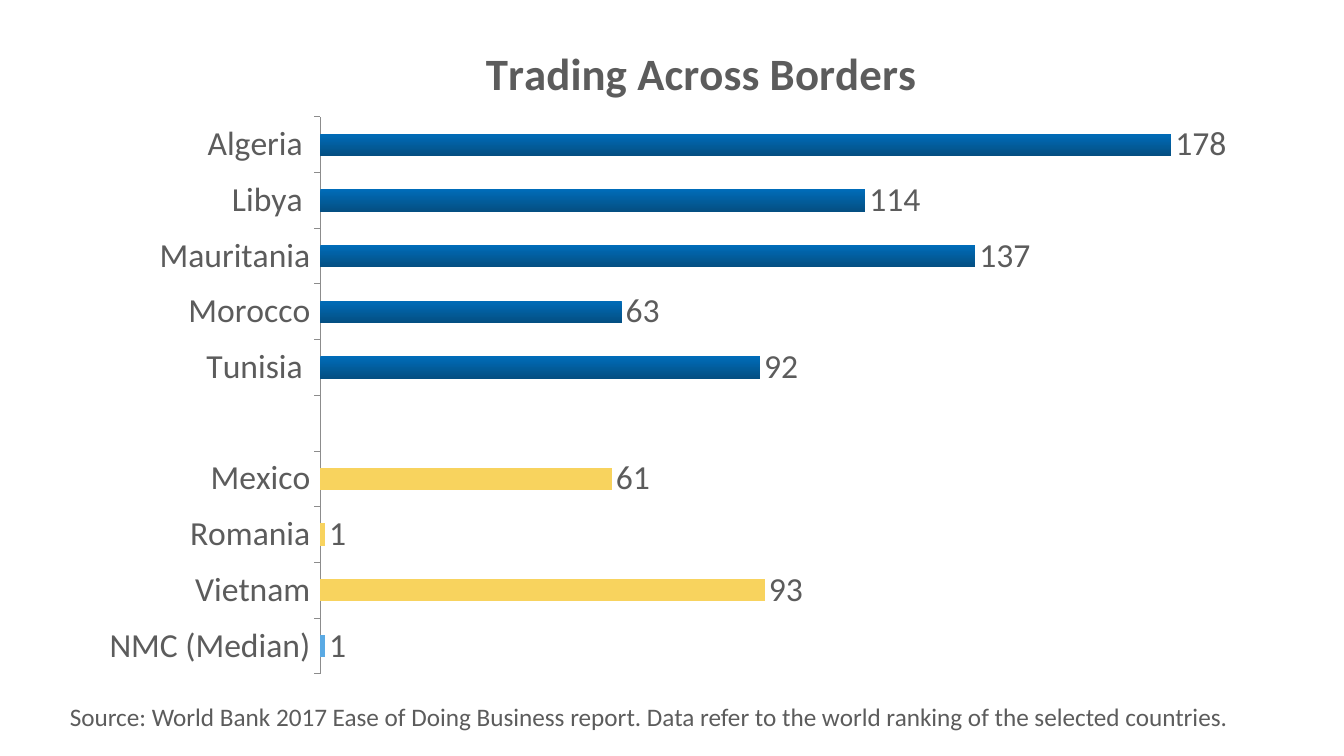
from dataclasses import dataclass

from lxml.etree import Element, SubElement, fromstring
from pptx import Presentation
from pptx.chart.data import CategoryChartData as ChartData
from pptx.dml.color import RGBColor
from pptx.enum.chart import XL_CHART_TYPE as Kind
from pptx.enum.chart import XL_LABEL_POSITION as Spot
from pptx.enum.chart import XL_TICK_MARK as Tick
from pptx.oxml.ns import qn
from pptx.util import Emu, Pt

FACE = "Calibri"
GREY = "5C5C5C"
BLUE = ("006CB9", "044F82")
GOLD = ("F8D35E",)
SKY = ("5AAAE4",)


@dataclass(frozen=True)
class Bar:
    name: str
    rank: int | None
    tint: tuple[str, ...]


# Listed from the bottom of the chart to the top
BARS = [
    Bar("NMC (Median)", 1, SKY),
    Bar("Vietnam", 93, GOLD),
    Bar("Romania", 1, GOLD),
    Bar("Mexico", 61, GOLD),
    Bar("", None, BLUE),
    Bar("Tunisia ", 92, BLUE),
    Bar("Morocco", 63, BLUE),
    Bar("Mauritania", 137, BLUE),
    Bar("Libya ", 114, BLUE),
    Bar("Algeria ", 178, BLUE),
]


def px(n: int) -> Emu:
    return Emu(n * 9525)


def color(code: str) -> RGBColor:
    return RGBColor.from_string(code)


def style(font, size: int, bold: bool = False) -> None:
    font.name = FACE
    font.size = Pt(size)
    font.bold = bold
    font.color.rgb = color(GREY)


def write(frame, text: str, **fmt) -> None:
    run = frame.paragraphs[0].add_run()
    run.text = text
    style(run.font, **fmt)


def place(part, index: int, **box: float) -> None:
    """Give a chart part a fixed layout, in fractions of the chart."""
    for old in part.findall(qn("c:layout")):
        part.remove(old)
    layout = part.makeelement(qn("c:layout"), {})
    part.insert(index, layout)
    manual = SubElement(layout, qn("c:manualLayout"))
    if "w" in box:
        SubElement(manual, qn("c:layoutTarget"), val="inner")
    for key in ("x", "y"):
        SubElement(manual, qn(f"c:{key}Mode"), val="edge")
    for key, share in box.items():
        SubElement(manual, qn(f"c:{key}"), val=str(share))


def paint(fill, tint: tuple[str, ...]) -> None:
    """Fill with one colour, or with two from top to bottom."""
    if len(tint) == 1:
        fill.solid()
        fill.fore_color.rgb = color(tint[0])
        return
    fill.gradient()
    fill.gradient_angle = 270
    for stop, code in zip(fill.gradient_stops, tint):
        stop.color.rgb = color(code)


def add_ranks(slide) -> None:
    data = ChartData()
    data.categories = [bar.name for bar in BARS]
    data.add_series("Series 1", [bar.rank for bar in BARS])
    chart = slide.shapes.add_chart(
        Kind.BAR_CLUSTERED, px(86), px(0), px(1153), px(655), data
    ).chart
    style(chart.font, 10)
    chart.has_legend = False

    chart.has_title = True
    title = chart.chart_title
    write(title.text_frame, "Trading Across Borders", size=32, bold=True)
    title.include_in_layout = False
    place(title._element, 1, x=0.32, y=0.05)
    place(chart._chartSpace.chart.plotArea, 0, x=0.19, y=0.17, w=0.79, h=0.81)

    names = chart.category_axis
    names.major_tick_mark = Tick.OUTSIDE
    names.format.line.color.rgb = color("8C8C8C")
    names.format.line.width = Pt(0.75)
    style(names.tick_labels.font, 24)
    scale = chart.value_axis
    scale.minimum_scale, scale.maximum_scale = 0, 200
    scale.has_major_gridlines = False
    scale.visible = False

    plot = chart.plots[0]
    plot.gap_width = 150
    plot.vary_by_categories = False
    ranks = plot.series[0]
    ranks.invert_if_negative = False
    paint(ranks.format.fill, BLUE)
    for i, bar in enumerate(BARS):
        if bar.tint != BLUE:
            paint(ranks.points[i].format.fill, bar.tint)
    labels = ranks.data_labels
    labels.show_value = True
    labels.position = Spot.OUTSIDE_END
    style(labels.font, 24)


def add_source(slide) -> None:
    frame = slide.shapes.add_textbox(px(57), px(663), px(1140), px(38)).text_frame
    frame.word_wrap = True
    write(
        frame,
        "Source: World Bank 2017 Ease of Doing Business report. "
        "Data refer to the world ranking of the selected countries.",
        size=18,
    )


def main() -> None:
    deck = Presentation()
    deck.slide_width, deck.slide_height = px(1280), px(720)
    slide = deck.slides.add_slide(deck.slide_layouts[6])
    add_source(slide)
    add_ranks(slide)
    deck.save("out.pptx")


if __name__ == "__main__":
    main()
